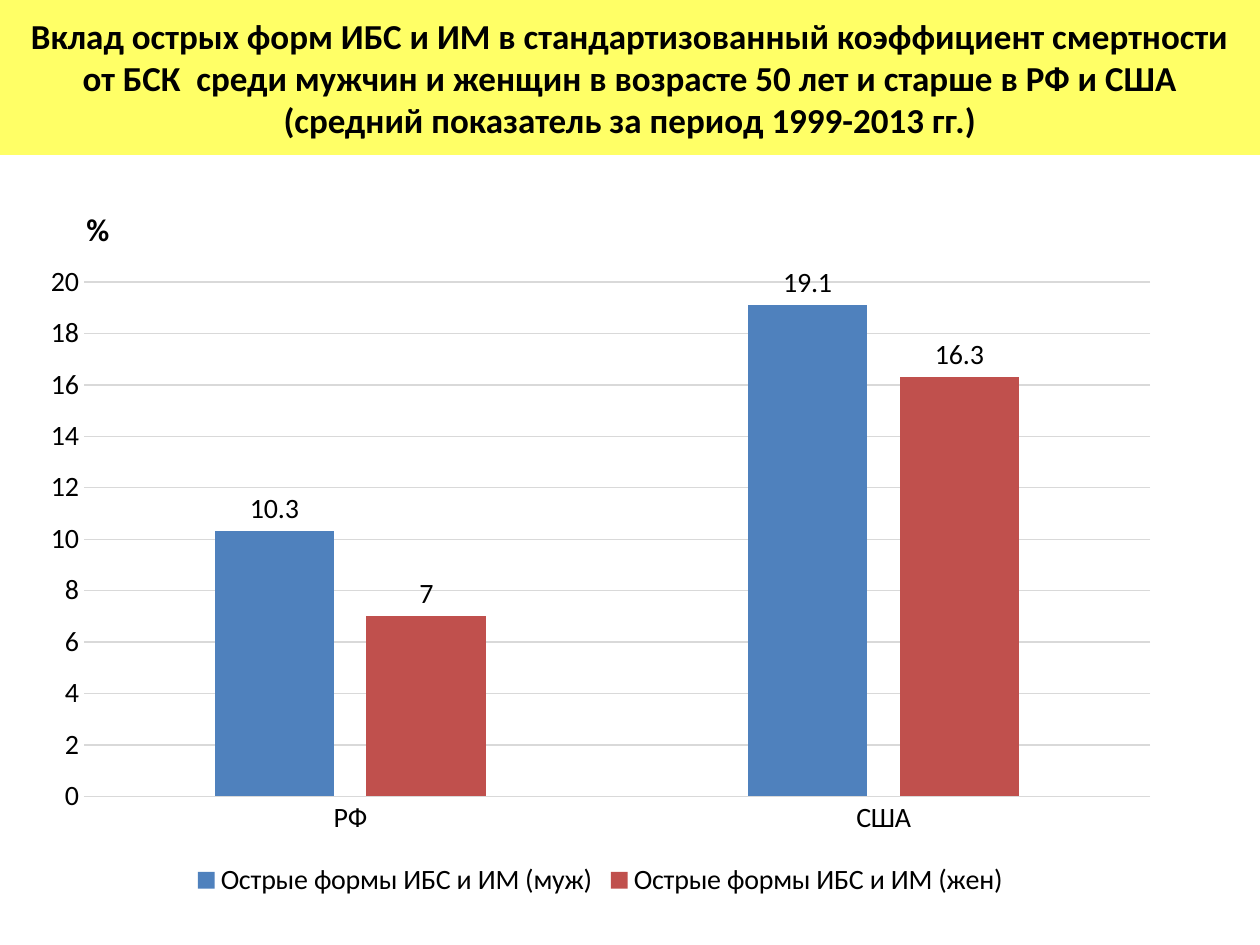
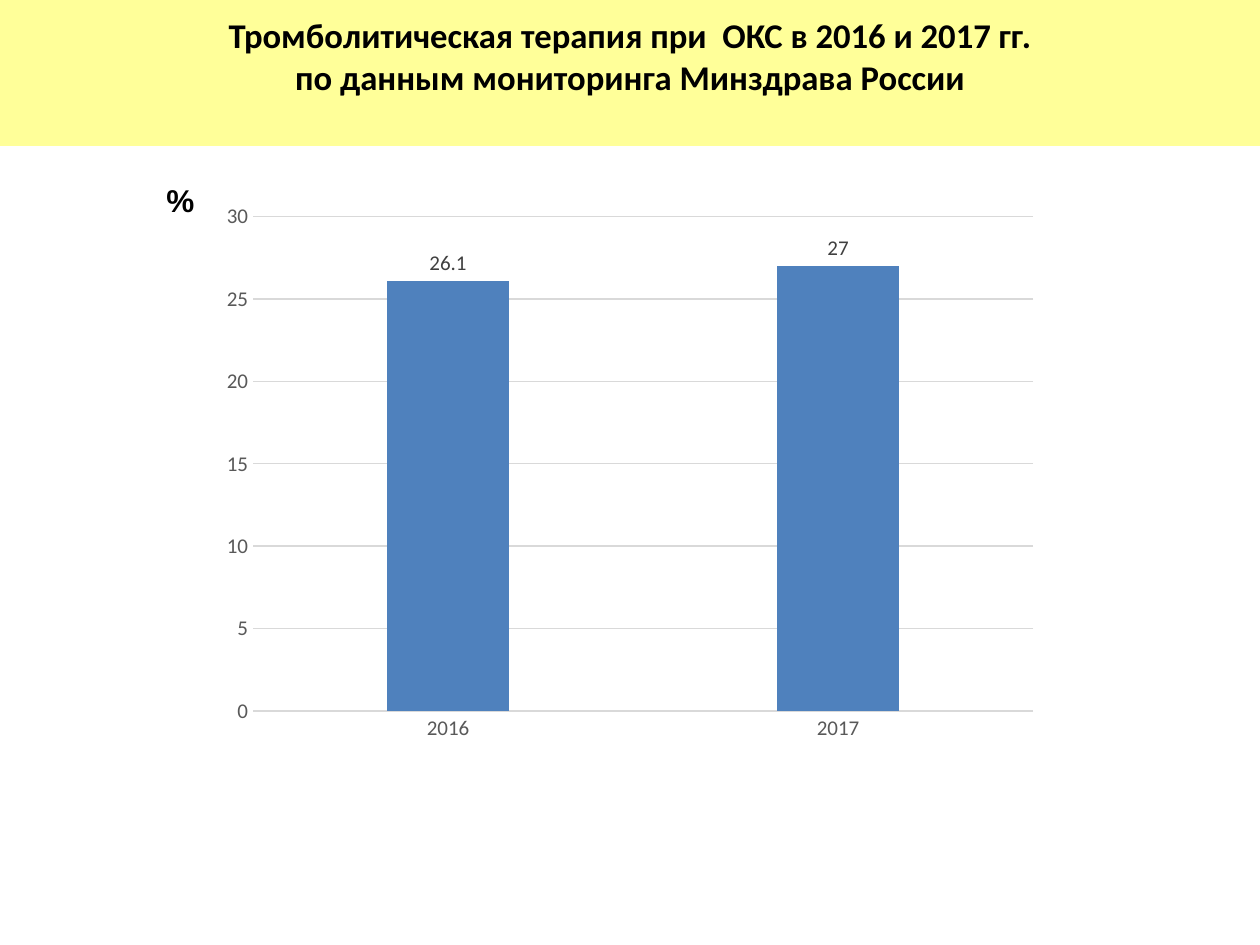
import pptx
import pptx.chart.data
import pptx.dml.color
import pptx.enum.chart
import pptx.enum.shapes
import pptx.enum.text
import pptx.util

RGBColor = pptx.dml.color.RGBColor
BLACK = RGBColor(0x00, 0x00, 0x00)
DARK_GRAY = RGBColor(0x40, 0x40, 0x40)
GRAY = RGBColor(0x59, 0x59, 0x59)
GRID_GRAY = RGBColor(0xD9, 0xD9, 0xD9)
BLUE = RGBColor(0x4F, 0x81, 0xBD)
RED = RGBColor(0xC0, 0x50, 0x4D)
YELLOW = RGBColor(0xFF, 0xFF, 0x66)
PALE_YELLOW = RGBColor(0xFF, 0xFF, 0x99)

PX_PER_INCH = 126
PAGE_WIDTH, PAGE_HEIGHT = 1260, 945
BODY_FONT = "Calibri"


def px(length):
    return pptx.util.Emu(round(length * 914400 / PX_PER_INCH))


def set_font(font, size, color=BLACK, name=BODY_FONT, bold=False):
    font.size = pptx.util.Pt(size)
    font.color.rgb = color
    font.name = name
    font.bold = bold


def write_text(frame, text, align=pptx.enum.text.PP_ALIGN.LEFT, **font_format):
    """Fill a text frame, one paragraph for each line of the text."""
    for index, line in enumerate(text.split("\n")):
        para = frame.add_paragraph() if index else frame.paragraphs[0]
        para.alignment = align
        span = para.add_run()
        span.text = line
        set_font(span.font, **font_format)


def add_title_band(page, text, height, fill, size, top_inset=None):
    """Add a full-width title; a top inset anchors the text to the top."""
    band = page.shapes.add_shape(
        pptx.enum.shapes.MSO_SHAPE.RECTANGLE, 0, 0, px(PAGE_WIDTH), px(height))
    band.shadow.inherit = False
    band.fill.solid()
    band.fill.fore_color.rgb = fill
    band.line.fill.background()
    frame = band.text_frame
    frame.word_wrap = True
    frame.vertical_anchor = pptx.enum.text.MSO_ANCHOR.MIDDLE
    if top_inset is not None:
        frame.vertical_anchor = pptx.enum.text.MSO_ANCHOR.TOP
        frame.margin_top = px(top_inset)
    write_text(frame, text, align=pptx.enum.text.PP_ALIGN.CENTER, size=size, bold=True)


def add_unit_label(page, left, top, width, height, font_name=BODY_FONT, wrap=False):
    box = page.shapes.add_textbox(px(left), px(top), px(width), px(height))
    box.text_frame.word_wrap = wrap
    write_text(box.text_frame, "%", size=18, name=font_name, bold=True)


def style_line(line, color):
    line.color.rgb = color
    line.width = pptx.util.Pt(0.75)


def style_axes(chart, size, color, maximum):
    for axis in (chart.category_axis, chart.value_axis):
        axis.major_tick_mark = pptx.enum.chart.XL_TICK_MARK.NONE
        axis.minor_tick_mark = pptx.enum.chart.XL_TICK_MARK.NONE
        set_font(axis.tick_labels.font, size, color)
    style_line(chart.category_axis.format.line, GRID_GRAY)
    values = chart.value_axis
    values.format.line.fill.background()
    values.has_major_gridlines = True
    style_line(values.major_gridlines.format.line, GRID_GRAY)
    values.minimum_scale = 0
    values.maximum_scale = maximum


def add_column_chart(page, left, top, width, height, categories, series, size,
                     axis_color=BLACK, label_color=BLACK, maximum=None, legend=False):
    """Add clustered columns; series holds (name, values, color) triples."""
    data = pptx.chart.data.CategoryChartData()
    data.categories = categories
    for name, values, _ in series:
        data.add_series(name, values)
    chart = page.shapes.add_chart(
        pptx.enum.chart.XL_CHART_TYPE.COLUMN_CLUSTERED,
        px(left), px(top), px(width), px(height), data).chart
    set_font(chart.font, size)
    chart.has_title = False
    chart.has_legend = legend
    if legend:
        chart.legend.position = pptx.enum.chart.XL_LEGEND_POSITION.BOTTOM
        chart.legend.include_in_layout = False
        set_font(chart.legend.font, size)
    style_axes(chart, size, axis_color, maximum)

    plot = chart.plots[0]
    plot.vary_by_categories = False
    plot.gap_width = 219
    plot.overlap = -27
    for columns, (_, _, color) in zip(plot.series, series):
        columns.format.fill.solid()
        columns.format.fill.fore_color.rgb = color
        columns.invert_if_negative = False
        labels = columns.data_labels
        labels.show_value = True
        labels.position = pptx.enum.chart.XL_LABEL_POSITION.OUTSIDE_END
        set_font(labels.font, size, label_color)


def build_mortality_page(page):
    add_title_band(
        page,
        "Вклад острых форм ИБС и ИМ в стандартизованный коэффициент смертности "
        "от БСК  среди мужчин и женщин в возрасте 50 лет и старше в РФ и США "
        "(средний показатель за период 1999-2013 гг.)",
        height=155, fill=YELLOW, size=20)
    add_column_chart(
        page, 28, 252, 1145, 651, ["РФ", "США"],
        [("Острые формы ИБС и ИМ (муж)", (10.3, 19.1), BLUE),
         ("Острые формы ИБС и ИМ (жен)", (7, 16.3), RED)],
        size=16, maximum=20, legend=True)
    add_unit_label(page, 74, 204, 49, 50)


def build_thrombolysis_page(page):
    add_title_band(
        page,
        "Тромболитическая терапия при  ОКС в 2016 и 2017 гг.\n"
        "по данным мониторинга Минздрава России",
        height=146, fill=PALE_YELLOW, size=19.8, top_inset=14)
    add_column_chart(
        page, 210, 193, 840, 559, ["2016", "2017"],
        [("Series 1", (26.1, 27), BLUE)],
        size=12, axis_color=GRAY, label_color=DARK_GRAY)
    add_unit_label(page, 154, 175, 630, 89, font_name="Arial", wrap=True)


def main():
    deck = pptx.Presentation()
    deck.slide_width, deck.slide_height = px(PAGE_WIDTH), px(PAGE_HEIGHT)
    blank = deck.slide_layouts[6]
    for build_page in (build_mortality_page, build_thrombolysis_page):
        build_page(deck.slides.add_slide(blank))
    deck.save("out.pptx")


if __name__ == "__main__":
    main()
